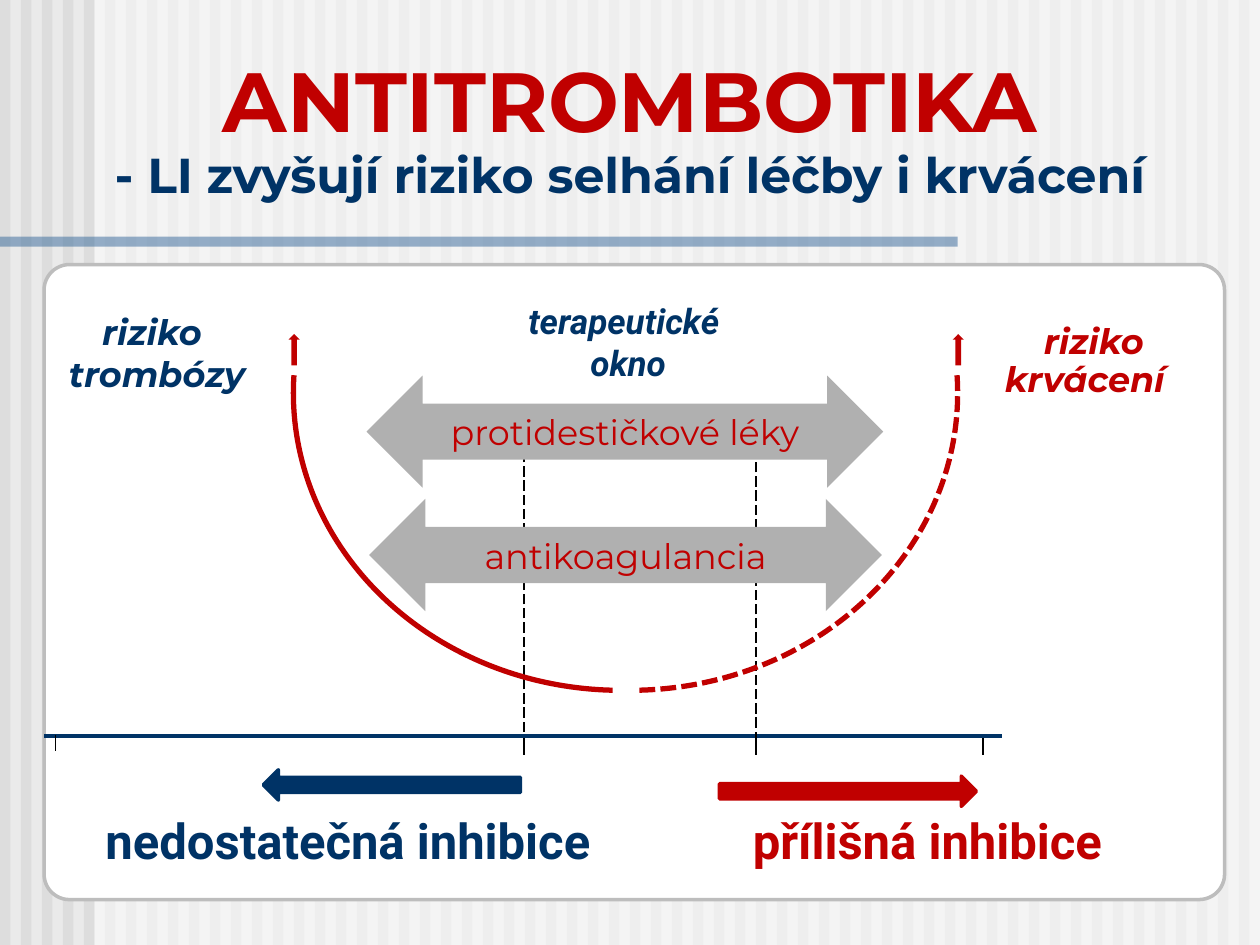
from lxml.etree import SubElement
from pptx import Presentation
from pptx.dml.color import RGBColor
from pptx.enum.dml import MSO_LINE
from pptx.enum.shapes import MSO_CONNECTOR, MSO_SHAPE
from pptx.enum.text import MSO_ANCHOR, MSO_AUTO_SIZE, PP_ALIGN
from pptx.oxml.ns import qn
from pptx.util import Pt

RED = RGBColor(0xC0, 0x00, 0x00)
NAVY = RGBColor(0x00, 0x33, 0x66)
BLUE = RGBColor(0x33, 0x66, 0x99)
BLACK = RGBColor(0x00, 0x00, 0x00)
WHITE = RGBColor(0xFF, 0xFF, 0xFF)
PALE = RGBColor(0xEA, 0xEA, 0xEA)
STRIPE = RGBColor(0xDD, 0xDD, 0xDD)
EDGE = RGBColor(0xBD, 0xBD, 0xBD)
GREY = RGBColor(0xB0, 0xB0, 0xB0)
SANS = "Montserrat"
PLAIN = "Roboto"


def add_form(shapes, kind, box, fill=None, line=None, width=2, turn=0, flip=False, adj=()):
    """Add a preset shape with plain fill and line."""
    form = shapes.add_shape(kind, *map(Pt, box))
    form.shadow.inherit = False
    form.rotation = turn
    for i, value in enumerate(adj):
        form.adjustments[i] = value
    if flip:
        form.element.spPr.find(qn("a:xfrm")).set("flipH", "1")
    if fill is None:
        form.fill.background()
    else:
        form.fill.solid()
        form.fill.fore_color.rgb = fill
    if line is None:
        form.line.fill.background()
    else:
        form.line.color.rgb = line
        form.line.width = Pt(width)
    return form


def fade(form):
    """Make a solid fill half transparent."""
    color = form.element.spPr.find(qn("a:solidFill"))[0]
    SubElement(color, qn("a:alpha")).set("val", "50000")


def add_line(shapes, start, end, color=BLACK, width=1, dash=None):
    """Add a straight line without a shadow."""
    line = shapes.add_connector(MSO_CONNECTOR.STRAIGHT, *map(Pt, start + end))
    line.line.color.rgb = color
    line.line.width = Pt(width)
    if dash:
        line.line.dash_style = dash
    SubElement(line.element.spPr, qn("a:effectLst"))


def add_run(para, text, size, color, font=SANS, bold=False, slant=False):
    """Add one formatted run to a paragraph."""
    run = para.add_run()
    run.text = text
    run.font.size = Pt(size)
    run.font.name = font
    run.font.bold = bold
    run.font.italic = slant
    run.font.color.rgb = color


def write(form, rows, grow=True, anchor=MSO_ANCHOR.TOP, gap=0, left=0, hang=0, **style):
    """Write centred rows of text and line spacing into a shape."""
    frame = form.text_frame
    frame.word_wrap = True
    frame.vertical_anchor = anchor
    frame.auto_size = MSO_AUTO_SIZE.SHAPE_TO_FIT_TEXT if grow else MSO_AUTO_SIZE.NONE
    for i, (text, space) in enumerate(rows):
        para = frame.add_paragraph() if i else frame.paragraphs[0]
        para.alignment = PP_ALIGN.CENTER
        para.line_spacing = space
        para.space_before = Pt(gap)
        if left and i == 0:
            props = para._p.get_or_add_pPr()
            props.set("marL", str(Pt(left)))
            props.set("indent", str(Pt(-hang)))
        add_run(para, text, **style)


def add_back(deck, slide):
    """Put the striped backdrop and the bar on the master."""
    master = deck.slide_master
    master.background.fill.solid()
    master.background.fill.fore_color.rgb = PALE
    group = slide.shapes.add_group_shape()
    for i in range(60):
        add_form(group.shapes, MSO_SHAPE.RECTANGLE, (12 * i, 0, 6, 540), STRIPE)
    fade(add_form(group.shapes, MSO_SHAPE.RECTANGLE, (54, 0, 666, 540), WHITE))
    fade(add_form(group.shapes, MSO_SHAPE.RECTANGLE, (0, 135.2, 547.2, 5.8), BLUE))
    for i, item in enumerate(group.element.iter(qn("p:cNvPr"))):
        item.set("id", str(100 + i))
    master.shapes[0].element.addprevious(group.element)


def set_title(slide):
    """Fill the title placeholder."""
    title = slide.shapes.title
    title.left, title.top, title.width, title.height = map(Pt, (8.6, 66.2, 702.7, 54))
    frame = title.text_frame
    frame.auto_size = MSO_AUTO_SIZE.NONE
    frame.vertical_anchor = MSO_ANCHOR.BOTTOM
    para = frame.paragraphs[0]
    para.alignment = PP_ALIGN.CENTER
    para.line_spacing = 0.9
    add_run(para, "ANTITROMBOTIKA", 48, RED, bold=True)
    para.add_line_break()
    add_run(para, "- LI zvyšují riziko selhání léčby i krvácení", 28, NAVY, bold=True)


def add_scale(shapes):
    """Draw the axis, its ticks and the window limits."""
    add_line(shapes, (572.4, 420.5), (25.2, 420.5), NAVY, 2)
    for x, y in ((31.7, 419.8), (299.5, 422), (432, 422), (561.6, 422)):
        add_line(shapes, (x, y), (x, y + 9.3))
    for x, y in ((299.5, 418.3), (432, 424)):
        add_line(shapes, (x, y), (x, y - 185.7), width=0.75, dash=MSO_LINE.LONG_DASH)


def add_risks(shapes):
    """Draw the risk labels and the window label."""
    style = dict(size=20, bold=True, slant=True)
    box = add_form(shapes, MSO_SHAPE.RECTANGLE, (27.4, 182.2, 124.6, 48.2), WHITE, WHITE, 0.75)
    write(box, [("riziko ", 0.6), ("trombózy", 0.6)], gap=10, color=NAVY, **style)
    box = add_form(shapes, MSO_SHAPE.RECTANGLE, (563, 179.3, 113.8, 53.3), WHITE, WHITE, 0.75)
    write(box, [("riziko ", 1), ("krvácení", 0.4)], gap=10, left=16, color=RED, **style)
    box = shapes.add_textbox(*map(Pt, (236.9, 167.8, 244.1, 55.4)))
    write(box, [("terapeutické ", 1), ("okno", 1)], color=NAVY, font=PLAIN, **style)


def add_curve(shapes):
    """Draw the two halves of the curve with their tips."""
    for x, tip, turn, flip in ((185, 159.1, 270, True), (190.1, 538.6, 90, False)):
        arc = add_form(shapes, MSO_SHAPE.ARC, (x, 37.4, 339.8, 374.4), line=RED, width=3,
                       turn=turn, flip=flip, adj=(160.13, 215.03))
        if not flip:
            arc.line.dash_style = MSO_LINE.SQUARE_DOT
        add_form(shapes, MSO_SHAPE.RIGHT_ARROW, (tip, 196.6, 18, 6.5), RED, turn=270)


def add_drugs(shapes):
    """Draw the double arrows of the drug groups."""
    for text, x, y, width in (("protidestičkové léky", 209.5, 214.6, 295.2),
                              ("antikoagulancia", 211, 285.1, 293)):
        form = add_form(shapes, MSO_SHAPE.LEFT_RIGHT_ARROW, (x, y, width, 64.1), GREY)
        write(form, [(text, 1)], False, MSO_ANCHOR.MIDDLE, size=20, color=RED)


def add_ends(shapes):
    """Draw the arrows and labels for both ends of the scale."""
    for text, x, width, arrow, y, color, flip in (
            ("nedostatečná inhibice", 42.5, 312.5, 150.5, 439.9, NAVY, True),
            ("přílišná inhibice", 370.8, 318.2, 411.1, 443.5, RED, False)):
        add_form(shapes, MSO_SHAPE.RIGHT_ARROW, (arrow, y, 146.9, 17.3), color, color, flip=flip)
        box = shapes.add_textbox(*map(Pt, (x, 459.4, width, 41)))
        write(box, [(text, 1)], gap=5.6, left=18.7, hang=18.7,
              size=28, color=color, font=PLAIN, bold=True)


def main():
    """Build the slide and save it."""
    deck = Presentation()
    deck.slide_width, deck.slide_height = Pt(720), Pt(540)
    slide = deck.slides.add_slide(deck.slide_layouts[5])
    shapes = slide.shapes
    add_back(deck, slide)
    set_title(slide)
    add_form(shapes, MSO_SHAPE.ROUNDED_RECTANGLE, (25.2, 151.2, 674.6, 362.9),
             WHITE, EDGE, adj=(0.04,))
    add_scale(shapes)
    add_risks(shapes)
    add_curve(shapes)
    add_drugs(shapes)
    add_ends(shapes)
    deck.save("out.pptx")


if __name__ == "__main__":
    main()
